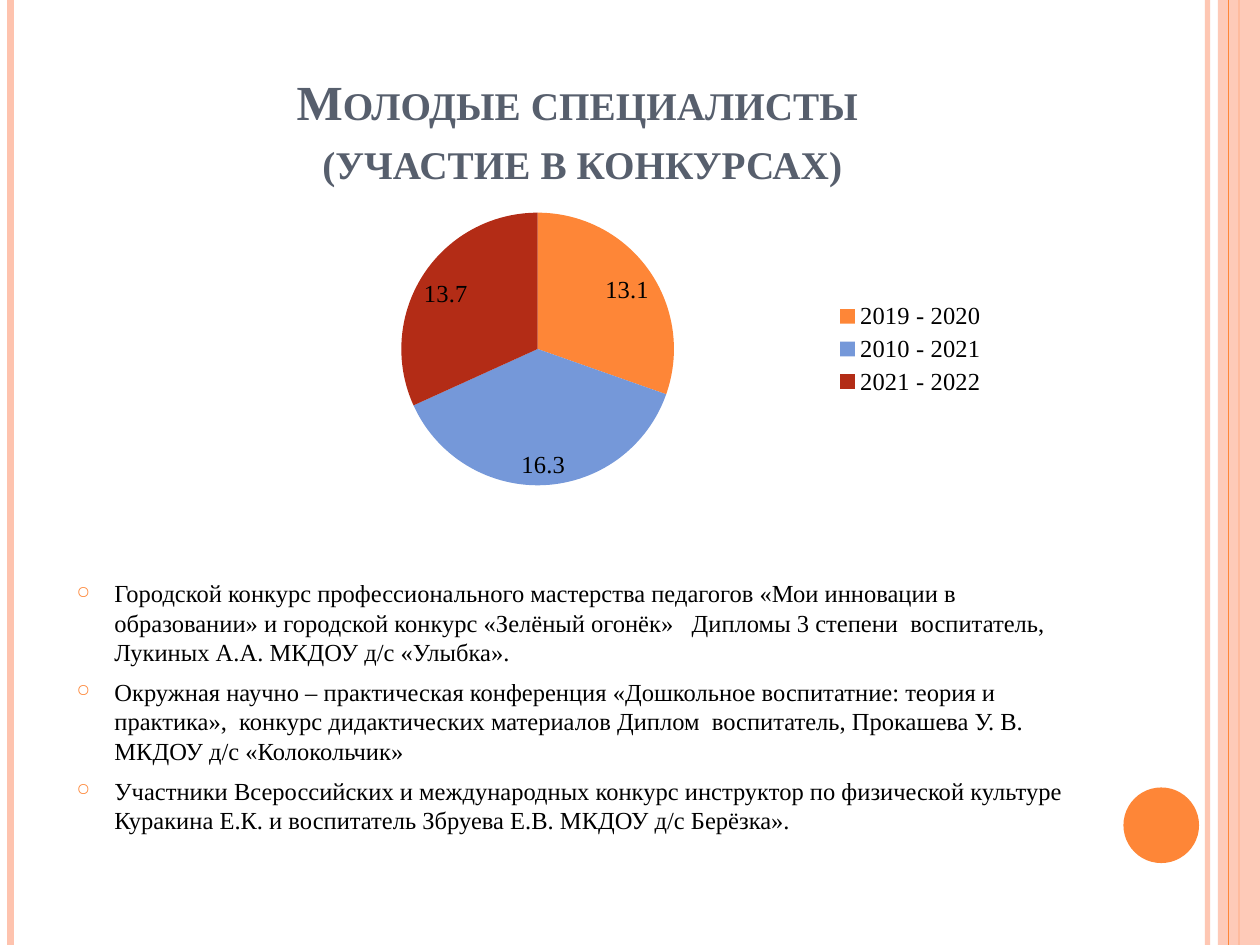
import pptx
import pptx.chart.data
import pptx.dml.color
import pptx.enum.chart
import pptx.enum.shapes
import pptx.enum.text
import pptx.oxml
import pptx.oxml.ns
import pptx.util

Pt = pptx.util.Pt
RGB = pptx.dml.color.RGBColor
qn = pptx.oxml.ns.qn
KIND = pptx.enum.shapes.MSO_SHAPE

PINK = RGB(0xFE, 0xC3, 0xAE)
ORANGE = RGB(0xFE, 0x86, 0x37)
BLUE = RGB(0x75, 0x98, 0xD9)
RED = RGB(0xB3, 0x2C, 0x16)
SLATE = RGB(0x57, 0x5F, 0x6D)
BLACK = RGB(0, 0, 0)
FACE = "Times New Roman"
WIDE, HIGH = 720, 540


def style(font, color, **form):
    font.color.rgb = color
    for key, val in {"name": FACE, **form}.items():
        setattr(font, key, val)


def fade(fill, alpha):
    """Set the opacity, in percent, of a solid fill's colour."""
    color = fill.find(".//" + qn("a:srgbClr"))
    pptx.oxml.ns  # namespace map used by makeelement below
    node = color.makeelement(qn("a:alpha"), {"val": str(alpha * 1000)})
    color.append(node)


deck = pptx.Presentation()
deck.slide_width, deck.slide_height = Pt(WIDE), Pt(HIGH)
slide = deck.slides.add_slide(deck.slide_layouts[6])
shapes = slide.shapes

# Side stripes, band and disc: x, width, colour, opacity
stripes = [
    (690, 3, PINK, 93),
    (6, 4.5, PINK, 100),
    (708, 1.5, ORANGE, 100),
    (702, 0.75, ORANGE, 100),
]
for x, width, color, alpha in stripes:
    line = shapes.add_connector(
        pptx.enum.shapes.MSO_CONNECTOR.STRAIGHT, Pt(x), 0, Pt(x), Pt(HIGH))
    line.line.width = Pt(width)
    line.line.color.rgb = color
    props = line._element.spPr
    if alpha < 100:
        fade(props, alpha)
    props.append(props.makeelement(qn("a:effectLst"), {}))

band = shapes.add_shape(KIND.RECTANGLE, Pt(696), 0, Pt(24), Pt(HIGH))
disc = shapes.add_shape(KIND.OVAL, Pt(642), Pt(450), Pt(43.2), Pt(43.2))
for shape, color in ((band, PINK), (disc, ORANGE)):
    shape.shadow.inherit = False
    shape.fill.solid()
    shape.fill.fore_color.rgb = color
    shape.line.fill.background()
fade(band._element.spPr, 87)

# The last stripe lies over the band
shapes._spTree.append(line._element)

# Title
title = shapes.add_textbox(Pt(36), Pt(21.6), Pt(588), Pt(90)).text_frame
title.word_wrap = True
title.vertical_anchor = pptx.enum.text.MSO_ANCHOR.BOTTOM
para = title.paragraphs[0]
para.text = "Молодые специалисты\v (участие в конкурсах)"
para.alignment = pptx.enum.text.PP_ALIGN.CENTER
for run in para.runs:
    style(run.font, SLATE, size=Pt(28), bold=True)
    run._r.get_or_add_rPr().set("cap", "small")

# Bulleted text
items = [
    "Городской конкурс профессионального мастерства педагогов «Мои инновации "
    "в образовании» и городской конкурс «Зелёный огонёк»   Дипломы 3 степени  "
    "воспитатель, Лукиных А.А. МКДОУ д/с «Улыбка».",
    "Окружная научно – практическая конференция «Дошкольное воспитатние: "
    "теория и практика»,  конкурс дидактических материалов Диплом  "
    "воспитатель, Прокашева У. В. МКДОУ д/с «Колокольчик»",
    "Участники Всероссийских и международных конкурс инструктор по физической "
    "культуре Куракина Е.К. и воспитатель Збруева Е.В. МКДОУ д/с Берёзка».",
]
body = shapes.add_textbox(Pt(36.7), Pt(326.9), Pt(587.5), Pt(182.9)).text_frame
body.word_wrap = True
for i, item in enumerate(items):
    para = body.add_paragraph() if i else body.paragraphs[0]
    para.space_before = Pt(6)
    run = para.add_run()
    run.text = item
    style(run.font, BLACK, size=Pt(14))
    props = para._p.get_or_add_pPr()
    props.set("marL", str(Pt(21.6)))
    props.set("indent", str(Pt(-21.6)))
    tint = props.makeelement(qn("a:buClr"), {})
    tint.append(tint.makeelement(qn("a:srgbClr"), {"val": str(ORANGE)}))
    props.append(tint)
    for tag, attr in (("a:buSzPct", {"val": "70000"}),
                      ("a:buChar", {"char": "○"})):
        props.append(props.makeelement(qn(tag), attr))

# Pie chart
data = pptx.chart.data.CategoryChartData()
data.categories = ["2019 - 2020", "2010 - 2021", "2021 - 2022"]
data.add_series("Series 1", (13.1, 16.3, 13.7))
chart = shapes.add_chart(
    pptx.enum.chart.XL_CHART_TYPE.PIE,
    Pt(139), Pt(111.6), Pt(432), Pt(175.7), data).chart
style(chart.font, BLACK, size=Pt(14))
chart.has_title = False
chart.has_legend = True
chart.legend.position = pptx.enum.chart.XL_LEGEND_POSITION.RIGHT
chart.legend.include_in_layout = False
plot = chart.plots[0]
plot.vary_by_categories = True
plot.has_data_labels = True
plot.data_labels.show_value = True
plot.data_labels.show_percentage = False
for i, color in enumerate((ORANGE, BLUE, RED)):
    fill = plot.series[0].points[i].format.fill
    fill.solid()
    fill.fore_color.rgb = color

deck.save("out.pptx")
